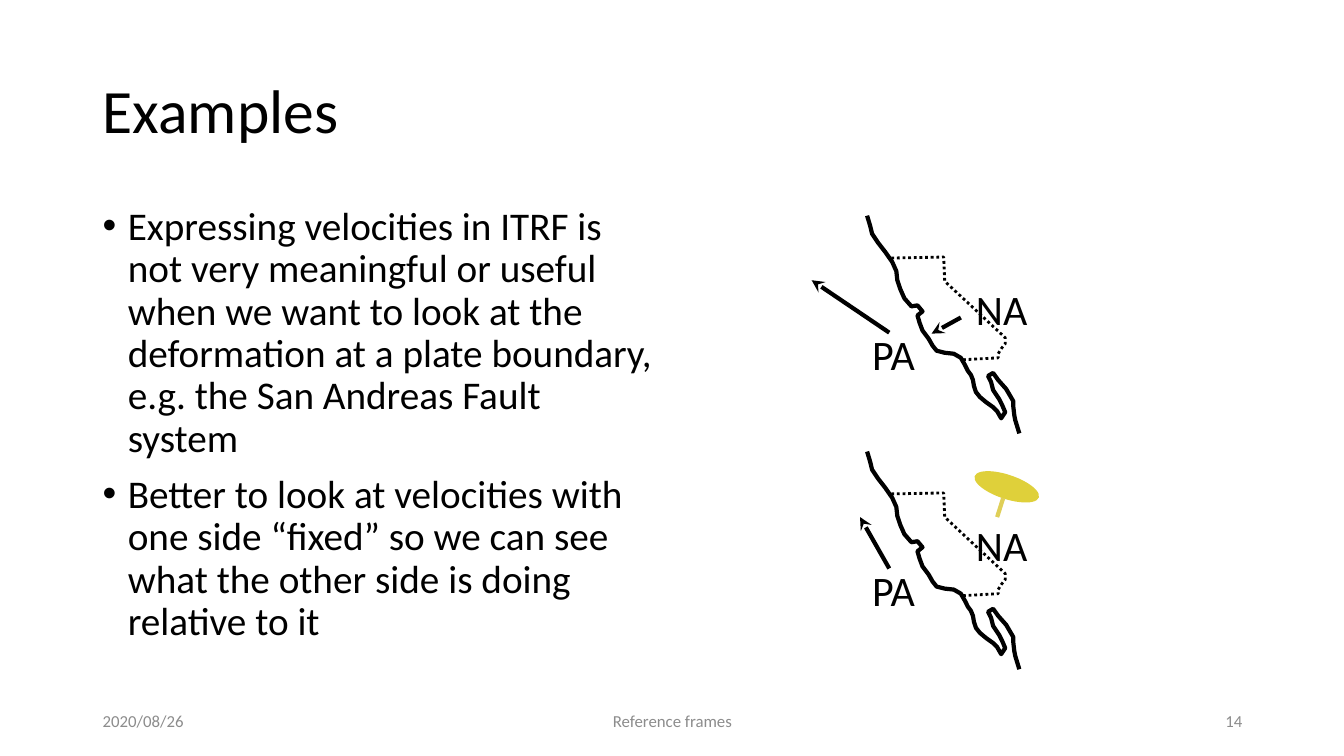
from lxml import etree
from pptx import Presentation
from pptx import util as u
from pptx.dml import color
from pptx.enum import dml, shapes, text
from pptx.oxml import ns

HUES = {"ink": "000000", "gray": "8C8C8C", "pin": "DFD03A", "stem": "DFCF58"}
ALIGN = {"left": text.PP_ALIGN.LEFT, "mid": text.PP_ALIGN.CENTER, "right": text.PP_ALIGN.RIGHT}
COAST = [
    (0, 0), (.3, 1), (.5, 1.8), (1.1, 2.7), (1.8, 3.6), (2.5, 4.6), (2.9, 5.5), (3, 6.4),
    (3.3, 7.3), (3.7, 8.2), (4.4, 9), (5, 8.9), (5.5, 9.5), (5, 9.9), (5.2, 10.6),
    (5.5, 11.4), (6.1, 12.2), (6.5, 12.9), (6.9, 13.4), (7.7, 13.6), (8.6, 13.7),
    (9.3, 14.1), (9.7, 14.8), (10, 15.4), (10.3, 15.8), (10.5, 16.3), (10.6, 16.9),
    (10.8, 17.5), (11.2, 18), (11.8, 18.5), (12.5, 19), (12.9, 19.4), (13.3, 20.1),
    (13.7, 19.5), (13.4, 18.8), (13.1, 18.2), (12.5, 17.3), (12.3, 16.5), (12, 15.9),
    (12.5, 15.6), (13, 16.3), (13.8, 17.2), (14.5, 18.4), (14.5, 18.9), (14.6, 19.8),
    (14.7, 20.3), (15.1, 21.6)]
STATE = [
    (2.4, 4.2), (7.6, 4.1), (7.7, 6.5), (13.7, 12.1), (13.7, 12.7), (13.3, 13.2),
    (13, 13.7), (13, 14.1), (9.3, 14.3)]
POINTS = [
    "Expressing velocities in ITRF is not very meaningful or useful when we want to look at "
    "the deformation at a plate boundary, e.g. the San Andreas Fault system",
    "Better to look at velocities with one side “fixed” so we can see what the other side "
    "is doing relative to it"]


class Page:
    font = "Calibri"
    cell = u.Inches(0.1)

    def __init__(self, deck):
        self.slide = deck.slides.add_slide(deck.slide_layouts[6])
        self.root = self.slide.shapes
        self.hold = self.root
        self.left, self.top = 0, 0

    def start_map(self, col, row):
        self.hold = self.root.add_group_shape().shapes
        self.left, self.top = col, row

    def spot(self, col, row):
        return round((self.left + col) * self.cell), round((self.top + row) * self.cell)

    def size(self, cols, rows):
        return round(cols * self.cell), round(rows * self.cell)

    def hue(self, name):
        return color.RGBColor.from_string(HUES[name])

    def pen(self, line, hue, width):
        line.color.rgb = self.hue(hue)
        line.width = u.Pt(width)

    def words(self, lines, col, row, cols, rows, points, hue="ink", align="left",
              middle=True, wrap=True, inset=None, space=None, list_style=False):
        box = self.hold.add_textbox(*self.spot(col, row), *self.size(cols, rows))
        frame = box.text_frame
        frame.word_wrap = wrap
        if not wrap:
            frame.auto_size = text.MSO_AUTO_SIZE.SHAPE_TO_FIT_TEXT
        frame.vertical_anchor = text.MSO_ANCHOR.MIDDLE if middle else text.MSO_ANCHOR.TOP
        if inset is not None:
            frame.margin_left = frame.margin_right = round(inset * self.cell)
            frame.margin_top = frame.margin_bottom = round(inset * self.cell)
        for i, line in enumerate(lines):
            para = frame.paragraphs[0] if i == 0 else frame.add_paragraph()
            para.alignment = ALIGN[align]
            para.line_spacing = space
            if list_style:
                self.bullet(para)
            run = para.add_run()
            run.text = line
            run.font.name = self.font
            run.font.size = u.Pt(points)
            run.font.color.rgb = self.hue(hue)

    def bullet(self, para):
        para.space_before = u.Pt(10)
        props = para._p.get_or_add_pPr()
        dent = round(2.5 * self.cell)
        props.set("marL", str(dent))
        props.set("indent", str(-dent))
        etree.SubElement(props, ns.qn("a:buFont")).set("typeface", "Arial")
        etree.SubElement(props, ns.qn("a:buChar")).set("char", "•")

    def trace(self, points, width, dash=None):
        spots = [self.spot(*point) for point in points]
        pen = self.hold.build_freeform(*spots[0], scale=1.0)
        pen.add_line_segments(spots[1:], close=False)
        shape = pen.convert_to_shape()
        shape.shadow.inherit = False
        shape.fill.background()
        self.pen(shape.line, "ink", width)
        if dash:
            shape.line.dash_style = dash

    def line(self, start, end, hue="ink", arrow=True):
        link = self.hold.add_connector(
            shapes.MSO_CONNECTOR.STRAIGHT, *self.spot(*start), *self.spot(*end))
        self.pen(link.line, hue, 3)
        if arrow:
            tail = etree.SubElement(link.line._get_or_add_ln(), ns.qn("a:tailEnd"))
            tail.set("type", "stealth")
        etree.SubElement(link._element.spPr, ns.qn("a:effectLst"))

    def oval(self, col, row, cols, rows, hue, turn):
        shape = self.hold.add_shape(
            shapes.MSO_SHAPE.OVAL, *self.spot(col, row), *self.size(cols, rows))
        shape.shadow.inherit = False
        shape.fill.solid()
        shape.fill.fore_color.rgb = self.hue(hue)
        shape.line.fill.background()
        shape.rotation = turn

    def plates(self, row, arrows):
        self.start_map(86, row)
        self.trace(COAST, 3)
        self.trace(STATE, 2, dml.MSO_LINE.ROUND_DOT)
        for start, end in arrows:
            self.line(start, end)
        for name, col, down, cols in (("PA", -.1, 10.6, 5.6), ("NA", 10.2, 6.1, 6.3)):
            self.words([name], col, down, cols, 6.2, 30, wrap=False, inset=.6)


def main():
    deck = Presentation()
    deck.slide_width, deck.slide_height = u.Inches(13.33), u.Inches(7.5)
    page = Page(deck)
    page.words(["Examples"], 9.2, 4, 115, 14.5, 44, space=.9)
    page.words(POINTS, 9.2, 20, 56.7, 47.6, 28, middle=False, space=.9, list_style=True)
    for note, col, cols, align in (("2020/08/26", 9.2, 30, "left"),
                                   ("Reference frames", 44.2, 45, "mid"),
                                   ("14", 94.2, 30, "right")):
        page.words([note], col, 69.5, cols, 4, 12, "gray", align)

    page.plates(21.4, [((2.2, 11.6), (-5.5, 6.4)), ((9.3, 10.1), (6.4, 11.7))])
    page.plates(44.8, [((2.2, 11.6), (-.7, 6.5))])
    page.oval(10.5, 2.3, 6.7, 2.4, "pin", 18.4)
    page.line((13.5, 4.6), (12.9, 6.5), "stem", arrow=False)
    deck.save("out.pptx")


if __name__ == "__main__":
    main()
